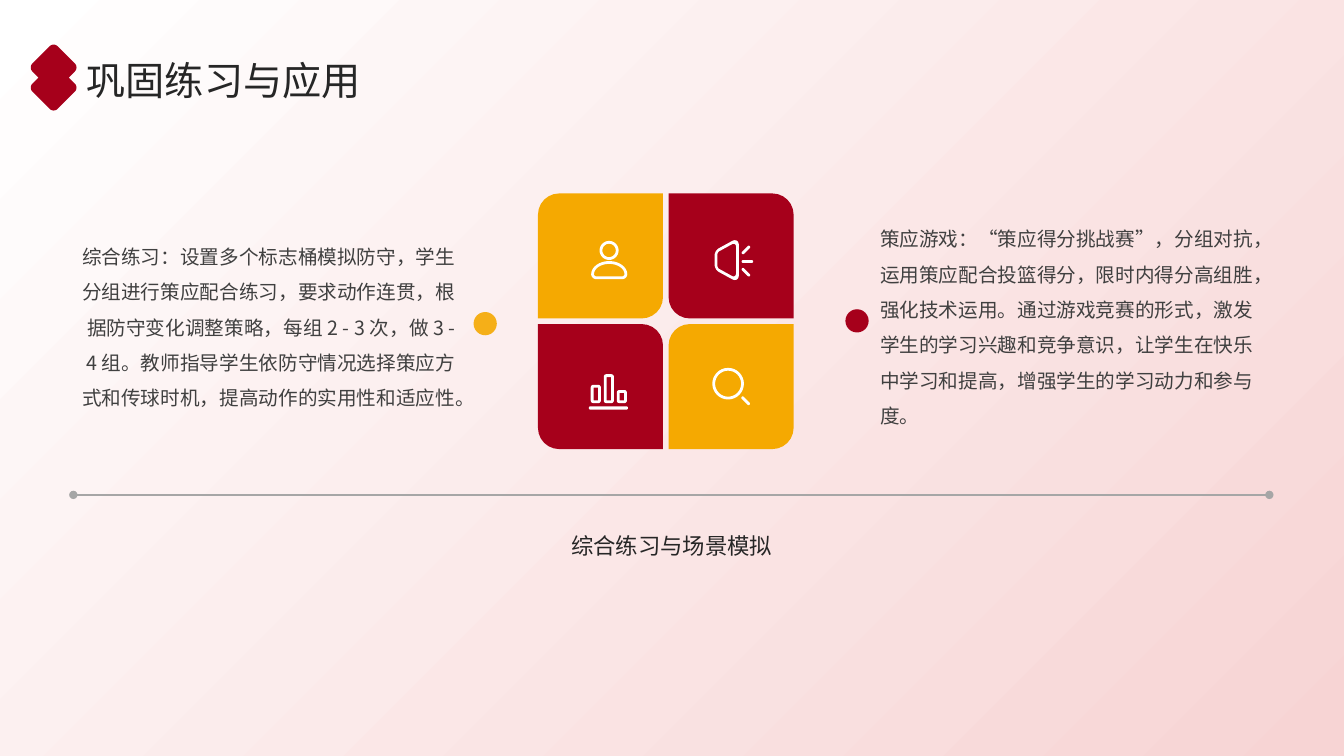
from dataclasses import dataclass
from math import hypot

from lxml import etree
from pptx import Presentation
from pptx.dml.color import RGBColor
from pptx.enum.shapes import MSO_CONNECTOR, MSO_SHAPE
from pptx.enum.text import MSO_ANCHOR, PP_ALIGN
from pptx.oxml.ns import qn
from pptx.util import Pt

RECTANGLE = MSO_SHAPE.RECTANGLE
OVAL = MSO_SHAPE.OVAL
LEAF = MSO_SHAPE.ROUND_2_DIAG_RECTANGLE
STRAIGHT = MSO_CONNECTOR.STRAIGHT
TOP, MIDDLE = MSO_ANCHOR.TOP, MSO_ANCHOR.MIDDLE
LEFT, CENTER, RIGHT = PP_ALIGN.LEFT, PP_ALIGN.CENTER, PP_ALIGN.RIGHT


@dataclass(frozen=True)
class Theme:
    font: str = "Noto Sans CJK SC"
    red: str = "A6001B"
    amber: str = "F5A901"
    white: str = "FFFFFF"
    blush: str = "F7D4D4"
    gray: str = "A6A6A6"
    ink: str = "262626"
    body_ink: str = "404040"
    title_size: int = 28
    caption_size: int = 16
    body_size: int = 14


# Outlines: each corner is (x, y, trim before, trim after)
def rounded(corners, steps=8):
    points = []
    for index, (x, y, before, after) in enumerate(corners):
        ends = []
        for neighbour, trim in ((corners[index - 1], before),
                                (corners[(index + 1) % len(corners)], after)):
            dx, dy = neighbour[0] - x, neighbour[1] - y
            ratio = trim / hypot(dx, dy)
            ends.append((x + dx * ratio, y + dy * ratio))
        (x1, y1), (x2, y2) = ends
        if not before and not after:
            points.append((x, y))
            continue
        for step in range(steps + 1):
            t = step / steps
            # Cubic weights for handles at 0.55 of the way to the corner
            first, second = (1 - t) ** 3, t ** 3
            near, far = 3 * t * (1 - t) ** 2, 3 * t ** 2 * (1 - t)
            start, end = first + 0.45 * near, second + 0.45 * far
            corner = 0.55 * (near + far)
            points.append((start * x1 + corner * x + end * x2,
                           start * y1 + corner * y + end * y2))
    return points


def box(left, top, width, height, upper, lower):
    right, bottom = left + width, top + height
    return rounded([(left, top, upper[1], upper[0]), (right, top, upper[0], upper[1]),
                    (right, bottom, lower[1], lower[0]), (left, bottom, lower[0], lower[1])])


def ring(left, top, width, height, upper, lower, stroke=2):
    inner_radii = [[max(0, radius - stroke) for radius in pair] for pair in (upper, lower)]
    return [box(left, top, width, height, upper, lower),
            box(left + stroke, top + stroke, width - 2 * stroke, height - 2 * stroke,
                *inner_radii)]


def circle_ring(left, top, size):
    radii = (size / 2, size / 2)
    return ring(left, top, size, size, radii, radii)


def capsule(x1, y1, x2, y2, half=1):
    length = hypot(x2 - x1, y2 - y1)
    ux, uy = half * (x2 - x1) / length, half * (y2 - y1) / length
    ends = ((x1 - ux, y1 - uy, 1), (x1 - ux, y1 - uy, -1),
            (x2 + ux, y2 + uy, -1), (x2 + ux, y2 + uy, 1))
    return rounded([(x - side * uy, y + side * ux, half, half) for x, y, side in ends])


def horn(left, right, middle, half_left, half_right, small, large):
    return rounded([(left, middle - half_left, small, small),
                    (right, middle - half_right, large, large),
                    (right, middle + half_right, large, large),
                    (left, middle + half_left, small, small)])


class SlideBuilder:
    def __init__(self, slide, theme):
        self.slide, self.theme = slide, theme

    def finish(self, shape, color, alpha=None):
        shape.shadow.inherit = False
        shape.line.fill.background()
        shape.fill.solid()
        shape.fill.fore_color.rgb = RGBColor.from_string(color)
        if alpha:
            value = shape.fill._xPr.find(".//" + qn("a:srgbClr"))
            etree.SubElement(value, qn("a:alpha")).set("val", str(alpha * 1000))
        return shape

    def shape(self, kind, left, top, width, height, color, alpha=None):
        shape = self.slide.shapes.add_shape(kind, Pt(left), Pt(top), Pt(width), Pt(height))
        return self.finish(shape, color, alpha)

    def gradient(self, width, height, start, end):
        shape = self.shape(RECTANGLE, 0, 0, width, height, start)
        shape.fill.gradient()
        shape.fill.gradient_angle = 315
        for stop, color in zip(shape.fill.gradient_stops, (start, end)):
            stop.color.rgb = RGBColor.from_string(color)

    def outline(self, contours, color):
        builder = None
        for contour in contours:
            points = [(Pt(x), Pt(y)) for x, y in contour]
            if builder is None:
                builder = self.slide.shapes.build_freeform(*points[0], scale=1.0)
            else:
                builder.move_to(*points[0])
            builder.add_line_segments(points[1:], close=True)
        self.finish(builder.convert_to_shape(), color)

    def line(self, x1, y1, x2, y2, color):
        connector = self.slide.shapes.add_connector(STRAIGHT, Pt(x1), Pt(y1), Pt(x2), Pt(y2))
        connector.line.width = Pt(1)
        connector.line.color.rgb = RGBColor.from_string(color)
        properties = connector.line._get_or_add_ln()
        for end in ("a:headEnd", "a:tailEnd"):
            etree.SubElement(properties, qn(end)).set("type", "oval")
        etree.SubElement(connector._element.spPr, qn("a:effectLst"))

    def text(self, text, left, top, width, height, *, size, color,
             align=LEFT, anchor=MIDDLE, spacing=1.5):
        frame = self.slide.shapes.add_textbox(
            Pt(left), Pt(top), Pt(width), Pt(height)).text_frame
        frame.word_wrap = True
        frame.vertical_anchor = anchor
        frame.margin_left = frame.margin_top = frame.margin_right = frame.margin_bottom = 0
        paragraph = frame.paragraphs[0]
        paragraph.alignment, paragraph.line_spacing = align, spacing
        run = paragraph.add_run()
        run.text = text
        run.font.size, run.font.name = Pt(size), self.theme.font
        run.font.color.rgb = RGBColor.from_string(color)
        etree.SubElement(run._r.get_or_add_rPr(), qn("a:ea")).set("typeface", self.theme.font)


def main():
    theme = Theme()
    presentation = Presentation()
    presentation.slide_width, presentation.slide_height = Pt(960), Pt(540)
    page = SlideBuilder(presentation.slides.add_slide(presentation.slide_layouts[6]), theme)

    # Background
    page.gradient(960, 540, theme.white, theme.blush)

    # Four tiles, rounded on alternating diagonals
    for row in range(2):
        for column in range(2):
            odd = (row + column) % 2
            tile = page.shape(LEAF, 384.3 + 93.3 * column, 138.2 + 93.3 * row, 89.3, 89.3,
                              theme.red if odd else theme.amber)
            tile.adjustments[0], tile.adjustments[1] = (0, 0.17) if odd else (0.17, 0)

    # Icons: person, megaphone, bars, magnifier
    person = circle_ring(428.3, 172.1, 13.6) + ring(
        422.3, 186.5, 25.8, 12.9, (12.8, 9.4), (3.6, 3.6))
    megaphone = [horn(510.5, 527.8, 185.8, 6.8, 16.3, 3.4, 5.6),
                 horn(512.5, 525.8, 185.8, 5.6, 12.9, 1.5, 3.4),
                 capsule(530.8, 180.6, 534.9, 176.5),
                 capsule(530.8, 186.8, 537, 186.8),
                 capsule(530.8, 192.4, 534.9, 196.5)]
    bars = [box(420.6, 290.2, 28, 2.4, (1.2, 1.2), (1.2, 1.2))]
    for index, height in enumerate((13, 20.6, 9.3)):
        bars += ring(422 + 9.3 * index, 287.9 - height, 7.2, height, (1.8, 1.8), (1.8, 1.8))
    magnifier = circle_ring(508.8, 262.8, 22.6) + [capsule(530.5, 284.2, 534.7, 288.4)]
    for icon in (person, megaphone, bars, magnifier):
        page.outline(icon, theme.white)

    # Side texts with their dots
    page.shape(OVAL, 338.3, 222.9, 16.6, 16.6, theme.amber, alpha=90)
    page.shape(OVAL, 603.9, 220.9, 16.6, 16.6, theme.red)
    body = {"size": theme.body_size, "color": theme.body_ink}
    page.text("综合练习：设置多个标志桶模拟防守，学生分组进行策应配合练习，要求动作连贯，"
              "根据防守变化调整策略，每组2 - 3次，做3 - 4组。教师指导学生依防守情况选择"
              "策应方式和传球时机，提高动作的实用性和适应性。",
              51.8, 138.2, 273.6, 182.9, align=RIGHT, **body)
    page.text("策应游戏：“策应得分挑战赛”，分组对抗，运用策应配合投篮得分，限时内得分高组胜，"
              "强化技术运用。通过游戏竞赛的形式，激发学生的学习兴趣和竞争意识，"
              "让学生在快乐中学习和提高，增强学生的学习动力和参与度。",
              628.6, 138.2, 277.9, 182.9, **body)

    # Divider and caption
    page.line(52.4, 353.5, 906.7, 353.5, theme.gray)
    page.text("综合练习与场景模拟", 61.9, 370.8, 835.9, 90, size=theme.caption_size,
              color=theme.ink, align=CENTER, anchor=TOP)

    # Title with its double diamond
    page.text("巩固练习与应用", 61.9, 36.7, 840.2, 36.7, size=theme.title_size,
              color=theme.ink, spacing=1.1)
    diamond = [(0, -25.2, 4), (18, -7.2, 4), (10.8, 0, 0), (18, 7.2, 4),
               (0, 25.2, 4), (-18, 7.2, 4), (-10.8, 0, 0), (-18, -7.2, 4)]
    page.outline([rounded([(38.3 + x, 55.4 + y, trim, trim) for x, y, trim in diamond])],
                 theme.red)

    presentation.save("out.pptx")


if __name__ == "__main__":
    main()
